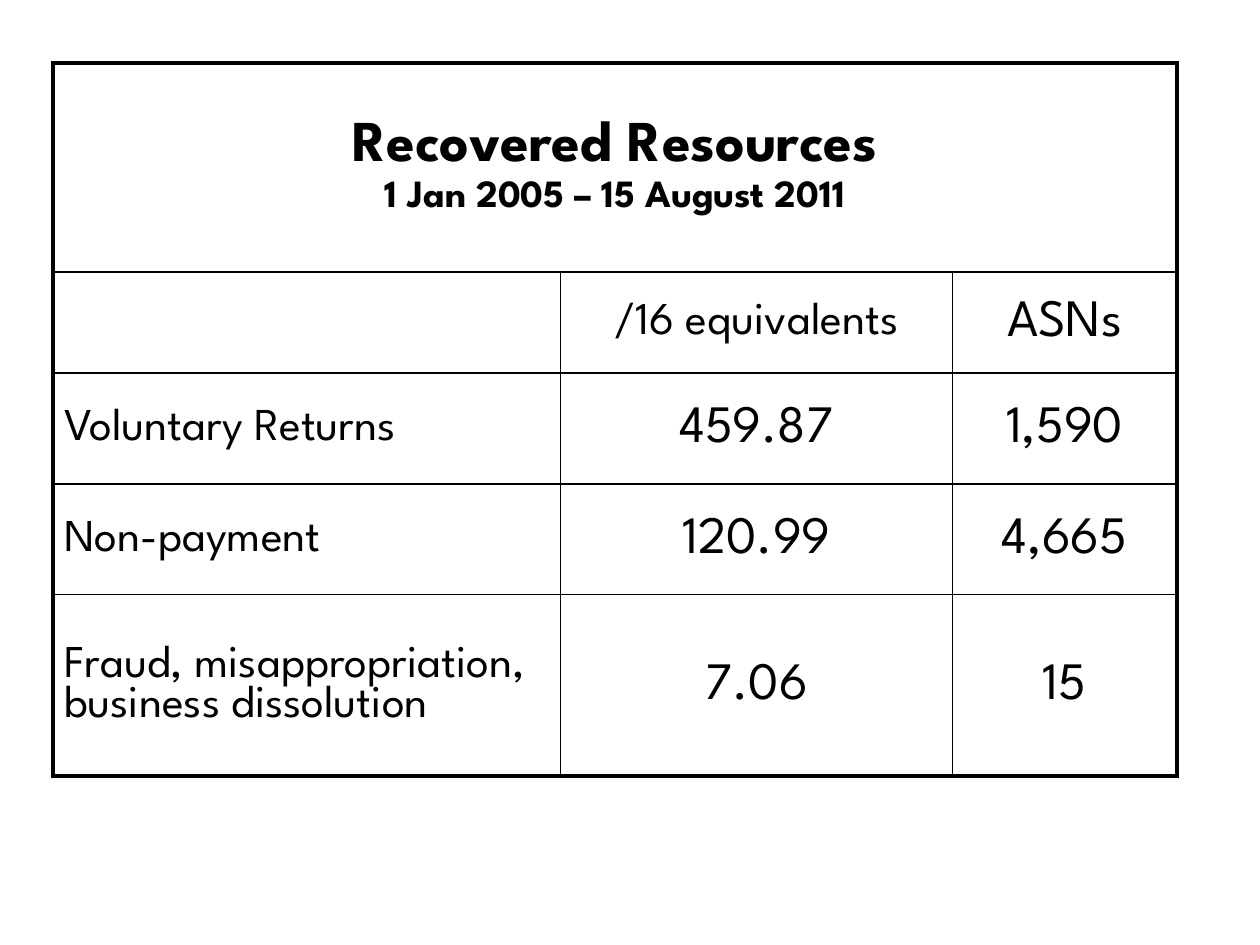
from lxml import etree
from pptx import Presentation
from pptx.dml.color import RGBColor
from pptx.enum.text import MSO_ANCHOR, PP_ALIGN
from pptx.oxml.ns import qn
from pptx.util import Inches, Pt

CENTER, LEFT, MIDDLE = PP_ALIGN.CENTER, PP_ALIGN.LEFT, MSO_ANCHOR.MIDDLE

TITLE = [("Recovered Resources", 33), ("1 Jan 2005 – 15 August 2011", 22)]
BODY = [
    ("", "/16 equivalents", "ASNs"),
    ("Voluntary Returns", "459.87", "1,590"),
    ("Non-payment", "120.99", "4,665"),
    ("Fraud, misappropriation, business dissolution", "7.06", "15"),
]
COLUMNS = [4.03, 3.11, 1.78]
ROWS = [1.66, 0.8, 0.88, 0.88, 1.44]
LEFT_EDGE, TOP_EDGE = 0.42, 0.5
COLORS = {"ink": "000000", "page": "FFFFFF"}
FONT = "League Spartan"
LABEL_SIZE, VALUE_SIZE = 26, 30
OUTER, INNER = 2.25, 1
PARAGRAPH_GAP = 5
CELL_FORMAT = {
    "vertical_anchor": MIDDLE,
    "margin_left": Inches(0.09), "margin_right": Inches(0.09),
    "margin_top": Inches(0.05), "margin_bottom": Inches(0.05),
}


def draw_borders(cell, row, column):
    """Give a cell thick lines on the table's outline and thin ones inside."""
    on_outline = {
        "a:lnL": column == 0,
        "a:lnR": column == len(COLUMNS) - 1,
        "a:lnT": row == 0,
        "a:lnB": row == len(ROWS) - 1,
    }
    properties = cell._tc.get_or_add_tcPr()
    for tag, outer in on_outline.items():
        line = etree.SubElement(properties, qn(tag), w=str(Pt(OUTER if outer else INNER)))
        fill = etree.SubElement(line, qn("a:solidFill"))
        etree.SubElement(fill, qn("a:srgbClr"), val=COLORS["ink"])


def write_cell(cell, lines, alignment, bold=False):
    """Write (text, size) pairs as the paragraphs of a cell."""
    frame = cell.text_frame
    for index, (text, size) in enumerate(lines):
        paragraph = frame.add_paragraph() if index else frame.paragraphs[0]
        paragraph.alignment = alignment
        paragraph.line_spacing = 0.95
        if index:
            paragraph.space_before = Pt(PARAGRAPH_GAP)
        run = paragraph.add_run()
        run.text = text
        for name, value in {"name": FONT, "size": Pt(size), "bold": bold}.items():
            setattr(run.font, name, value)
        run.font.color.rgb = RGBColor.from_string(COLORS["ink"])


def main():
    presentation = Presentation()
    presentation.slide_width, presentation.slide_height = Inches(10), Inches(7.5)
    slide = presentation.slides.add_slide(presentation.slide_layouts[6])
    table = slide.shapes.add_table(
        len(ROWS), len(COLUMNS), Inches(LEFT_EDGE), Inches(TOP_EDGE),
        Inches(sum(COLUMNS)), Inches(sum(ROWS))).table
    table.first_row = table.horz_banding = False
    for column, width in zip(table.columns, COLUMNS):
        column.width = Inches(width)
    for row, height in zip(table.rows, ROWS):
        row.height = Inches(height)

    for row in range(len(ROWS)):
        for column in range(len(COLUMNS)):
            cell = table.cell(row, column)
            draw_borders(cell, row, column)
            cell.fill.solid()
            cell.fill.fore_color.rgb = RGBColor.from_string(COLORS["page"])
            for name, value in CELL_FORMAT.items():
                setattr(cell, name, value)

    title = table.cell(0, 0)
    title.merge(table.cell(0, len(COLUMNS) - 1))
    draw_title_right = title._tc.tcPr.find(qn("a:lnR"))
    draw_title_right.set("w", str(Pt(OUTER)))
    write_cell(title, TITLE, CENTER, bold=True)

    for row, texts in enumerate(BODY, start=1):
        for column, text in enumerate(texts):
            is_label = column == 0 or (row == 1 and column == 1)
            size = LABEL_SIZE if is_label else VALUE_SIZE
            if text:
                write_cell(table.cell(row, column), [(text, size)], CENTER if column else LEFT)

    presentation.save("out.pptx")


if __name__ == "__main__":
    main()
